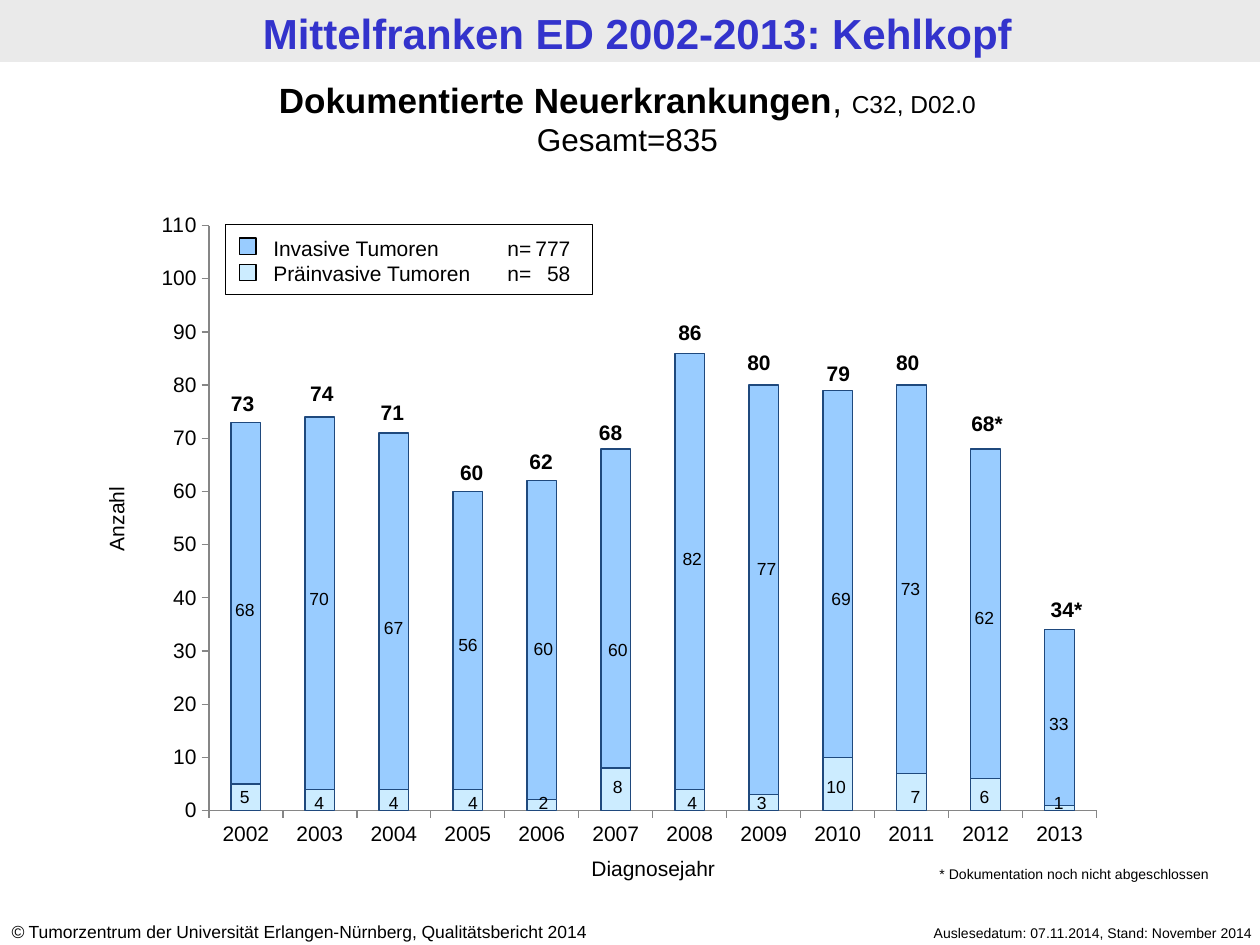
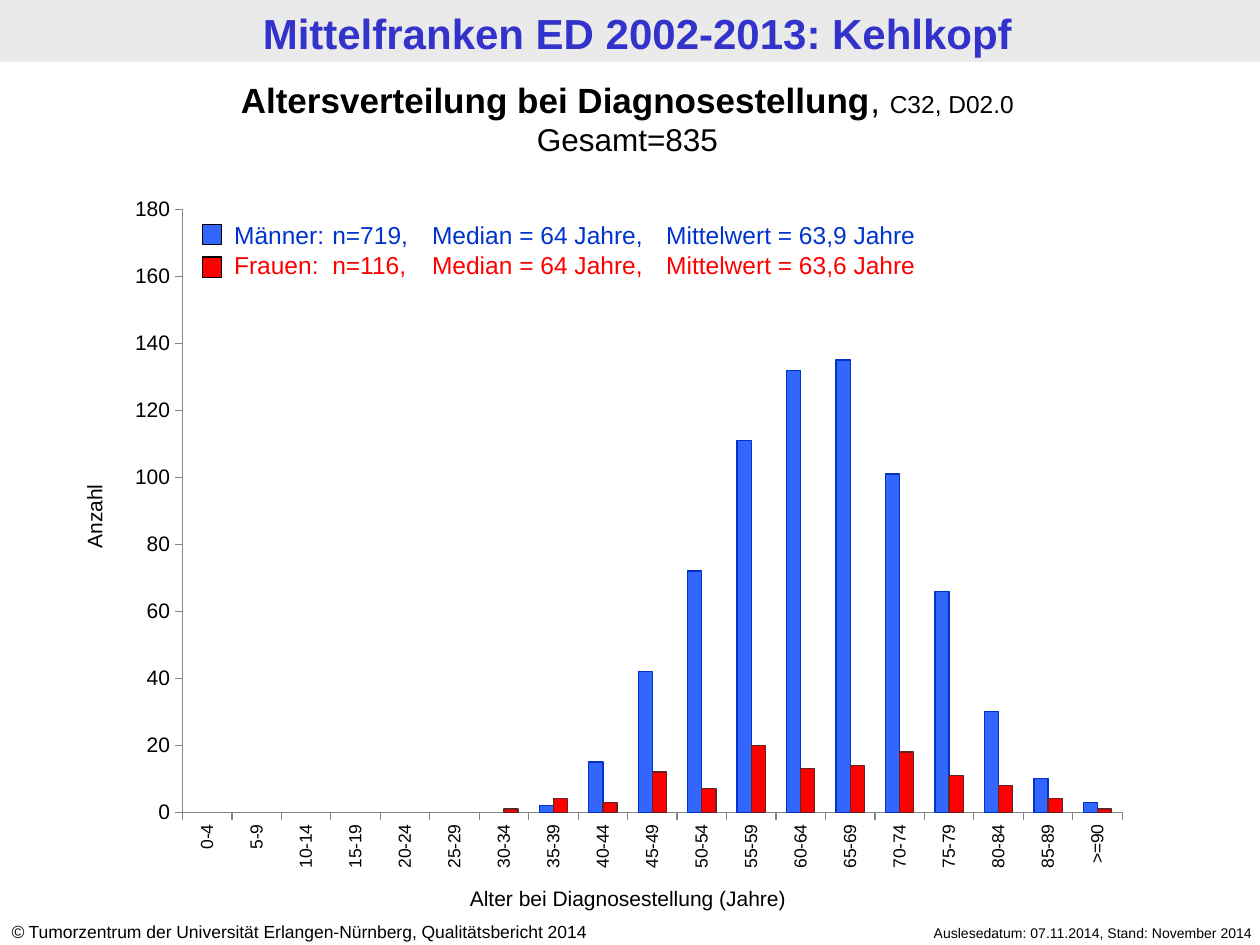
"""Build two slides on larynx tumours: new cases per year and age at diagnosis."""
from lxml import etree
from pptx import Presentation
from pptx import util as u
from pptx.chart.data import CategoryChartData
from pptx.dml.color import RGBColor
from pptx.enum import chart as ch, shapes, text
from pptx.oxml import parse_xml
from pptx.oxml.ns import nsdecls, qn

C = {
    "band": "EAEAEA", "title": "3333CC", "black": "000000", "axis": "868686",
    "invasive": "99CCFF", "preinvasive": "CCECFF", "bar_line": "1F497D",
    "men": "3366FF", "men_dark": "0033CC", "women": "FF0000", "women_line": "632523",
}
LEFT, CENTER, RIGHT = text.PP_ALIGN.LEFT, text.PP_ALIGN.CENTER, text.PP_ALIGN.RIGHT


def add_text(s, box, paragraphs, align=CENTER, tabs=(), rotation=0):
    """Add a text box; each run is (text, size, colour key, bold, italic), the last three optional."""
    tb = s.shapes.add_textbox(*[u.Cm(v) for v in box])
    tb.rotation = rotation
    tf = tb.text_frame
    tf.word_wrap = True
    for i, runs in enumerate(paragraphs):
        p = tf.paragraphs[0] if i == 0 else tf.add_paragraph()
        if tabs:
            tab_list = etree.SubElement(p._p.get_or_add_pPr(), qn("a:tabLst"))
            for pos, kind in tabs:
                etree.SubElement(tab_list, qn("a:tab"), pos=str(u.Cm(pos)), algn=kind)
        p.alignment = align
        for words, size, *style in runs:
            color, bold, italic = style + ["black", False, False][len(style):]
            r = p.add_run()
            r.text = words
            r.font.name = "Arial"
            r.font.size = u.Pt(size)
            r.font.bold = bold
            r.font.italic = italic
            r.font.color.rgb = RGBColor.from_string(C[color])


def add_columns(s, kind, box, plot_box, cats, series, top, step, overlap, cat_size):
    """Add a column chart; each series is (name, values, fill key, line key)."""
    data = CategoryChartData()
    data.categories = cats
    for name, values, _, _ in series:
        data.add_series(name, values)
    chart = s.shapes.add_chart(kind, *[u.Cm(v) for v in box], data).chart
    chart.has_legend = False
    chart.has_title = False
    chart.font.name = "Arial"
    chart.font.size = u.Pt(12)
    chart.font.color.rgb = RGBColor.from_string(C["black"])
    plot = chart.plots[0]
    plot.gap_width = 150
    plot.overlap = overlap
    plot.vary_by_categories = False
    for ser, (_, _, fill, line) in zip(plot.series, series):
        ser.format.fill.solid()
        ser.format.fill.fore_color.rgb = RGBColor.from_string(C[fill])
        ser.format.line.color.rgb = RGBColor.from_string(C[line])
        ser.format.line.width = u.Pt(0.75)
    for axis, size in ((chart.category_axis, cat_size), (chart.value_axis, 12)):
        axis.has_major_gridlines = False
        axis.major_tick_mark = ch.XL_TICK_MARK.OUTSIDE
        axis.minor_tick_mark = ch.XL_TICK_MARK.NONE
        axis.format.line.color.rgb = RGBColor.from_string(C["axis"])
        axis.format.line.width = u.Pt(0.75)
        axis.tick_labels.font.size = u.Pt(size)
        axis.tick_labels.font.name = "Arial"
    chart.value_axis.minimum_scale = 0
    chart.value_axis.maximum_scale = top
    chart.value_axis.major_unit = step
    area = chart._chartSpace.chart.plotArea
    for old in area.findall(qn("c:layout")):
        area.remove(old)
    sizes = "".join(f'<c:{tag} val="{v}"/>' for tag, v in zip("xywh", plot_box))
    area.insert(0, parse_xml(
        f'<c:layout {nsdecls("c")}><c:manualLayout><c:layoutTarget val="inner"/>'
        f'<c:xMode val="edge"/><c:yMode val="edge"/>{sizes}</c:manualLayout></c:layout>'))
    return chart


prs = Presentation()
prs.slide_width, prs.slide_height = u.Cm(25.4), u.Cm(19.05)

slides = []
for heading in ("Dokumentierte Neuerkrankungen", "Altersverteilung bei Diagnosestellung"):
    s = prs.slides.add_slide(prs.slide_layouts[6])
    band = s.shapes.add_shape(shapes.MSO_SHAPE.RECTANGLE, 0, 0, prs.slide_width, u.Cm(1.25))
    band.shadow.inherit = False
    band.fill.solid()
    band.fill.fore_color.rgb = RGBColor.from_string(C["band"])
    band.line.fill.background()
    add_text(s, (0.15, 0.03, 25.4, 1.25),
             [[("Mittelfranken ED 2002-2013: Kehlkopf", 24, "title", True)]])
    add_text(s, (16.89, 18.52, 8.61, 0.6),
             [[("Auslesedatum: 07.11.2014, Stand: November 2014", 8)]], RIGHT)
    add_text(s, (-0.02, 18.44, 13.3, 0.68),
             [[("©", 10, "black", False, True),
               (" Tumorzentrum der Universität Erlangen-Nürnberg, Qualitätsbericht 2014", 10)]], LEFT)
    add_text(s, (-0.1, 1.45, 25.5, 1.88),
             [[(heading, 20, "black", True), (", ", 20), ("C32, D02.0", 14)],
              [("Gesamt=835", 18)]])
    slides.append(s)
cases, ages = slides

years = [str(y) for y in range(2002, 2014)]
preinvasive = [5, 4, 4, 4, 2, 8, 4, 3, 10, 7, 6, 1]
invasive = [68, 70, 67, 56, 60, 60, 82, 77, 69, 73, 62, 33]
add_columns(cases, ch.XL_CHART_TYPE.COLUMN_STACKED, (2.92, 4.17, 19.58, 13.06),
            (0.066, 0.029, 0.914, 0.903), years,
            [("Präinvasive Tumoren", preinvasive, "preinvasive", "bar_line"),
             ("Invasive Tumoren", invasive, "invasive", "bar_line")],
            top=110, step=10, overlap=100, cat_size=12)
add_text(cases, (10.31, 17.12, 5.72, 0.76), [[("Diagnosejahr", 12)]])
add_text(cases, (0.79, 10.08, 3.1, 0.76), [[("Anzahl", 12)]], rotation=270)
add_text(cases, (18.69, 17.32, 6.86, 0.6), [[("* Dokumentation noch nicht abgeschlossen", 8)]], LEFT)

totals = ["73", "74", "71", "60", "62", "68", "86", "80", "79", "80", "68*", "34*"]
total_at = [(4.09, 7.75), (5.69, 7.54), (7.11, 7.92), (8.71, 9.14), (10.11, 8.92), (11.51, 8.33),
            (13.11, 6.32), (14.5, 6.93), (16.1, 7.14), (17.5, 6.93), (19.1, 8.15), (20.7, 11.91)]
invasive_at = [(4.39, 11.96), (5.89, 11.73), (7.39, 12.32), (8.89, 12.65), (10.41, 12.73),
               (11.91, 12.75), (13.41, 10.92), (14.91, 11.13), (16.41, 11.73), (17.81, 11.53),
               (19.3, 12.12), (20.8, 14.25)]
preinvasive_at = [(4.39, 15.72), (5.89, 15.85), (7.39, 15.85), (8.99, 15.85), (10.41, 15.85),
                  (11.91, 15.52), (13.41, 15.85), (14.81, 15.85), (16.31, 15.52), (17.91, 15.72),
                  (19.3, 15.72), (20.8, 15.85)]
for labels, places, width, height, size, bold in (
        (totals, total_at, 1.6, 0.76, 12, True),
        (invasive, invasive_at, 1.09, 0.68, 10, False),
        (preinvasive, preinvasive_at, 1.09, 0.68, 10, False)):
    for label, (x, y) in zip(labels, places):
        add_text(cases, (x, y, width, height), [[(str(label), size, "black", bold)]])

add_text(cases, (5.26, 4.62, 7.26, 1.27),
         [[("Invasive Tumoren\tn=\t777", 12)], [("Präinvasive Tumoren\tn=\t58", 12)]],
         LEFT, tabs=((4.72, "l"), (5.99, "r")))

age_groups = [f"{a}-{a + 4}" for a in range(0, 90, 5)] + [">=90"]
men = [None] * 7 + [2, 15, 42, 72, 111, 132, 135, 101, 66, 30, 10, 3]
women = [None] * 6 + [1, 4, 3, 12, 7, 20, 13, 14, 18, 11, 8, 4, 1]
age_chart = add_columns(ages, ch.XL_CHART_TYPE.COLUMN_CLUSTERED, (2.31, 3.73, 20.73, 14.1),
                        (0.066, 0.035, 0.914, 0.862), age_groups,
                        [("Männer", men, "men", "men_dark"),
                         ("Frauen", women, "women", "women_line")],
                        top=180, step=20, overlap=0, cat_size=10)
age_chart.category_axis._element.txPr.bodyPr.set("rot", "-5400000")
add_text(ages, (8.76, 17.73, 7.8, 0.76), [[("Alter bei Diagnosestellung (Jahre)", 12)]])
add_text(ages, (-1.42, 10.03, 6.63, 0.76), [[("Anzahl", 12)]], rotation=270)
add_text(ages, (4.47, 4.32, 17.4, 1.45),
         [[("Männer:\tn=719,\tMedian = 64 Jahre,\tMittelwert = 63,9 Jahre", 14, "men_dark")],
          [("Frauen:\tn=116,\tMedian = 64 Jahre,\tMittelwert = 63,6 Jahre", 14, "women")]],
         LEFT, tabs=((1.98, "l"), (3.99, "l"), (8.71, "l")))

for s, box, fill in (
        (cases, (4.55, 4.52, 7.39, 1.42), None),
        (cases, (4.83, 4.8, 0.33, 0.33), "invasive"),
        (cases, (4.83, 5.33, 0.33, 0.33), "preinvasive"),
        (ages, (4.09, 4.52, 0.38, 0.41), "men"),
        (ages, (4.09, 5.18, 0.38, 0.41), "women")):
    sp = s.shapes.add_shape(shapes.MSO_SHAPE.RECTANGLE, *[u.Cm(v) for v in box])
    sp.shadow.inherit = False
    if fill:
        sp.fill.solid()
        sp.fill.fore_color.rgb = RGBColor.from_string(C[fill])
    else:
        sp.fill.background()
    sp.line.color.rgb = RGBColor.from_string(C["black"])
    sp.line.width = u.Pt(0.75)

prs.save("out.pptx")
